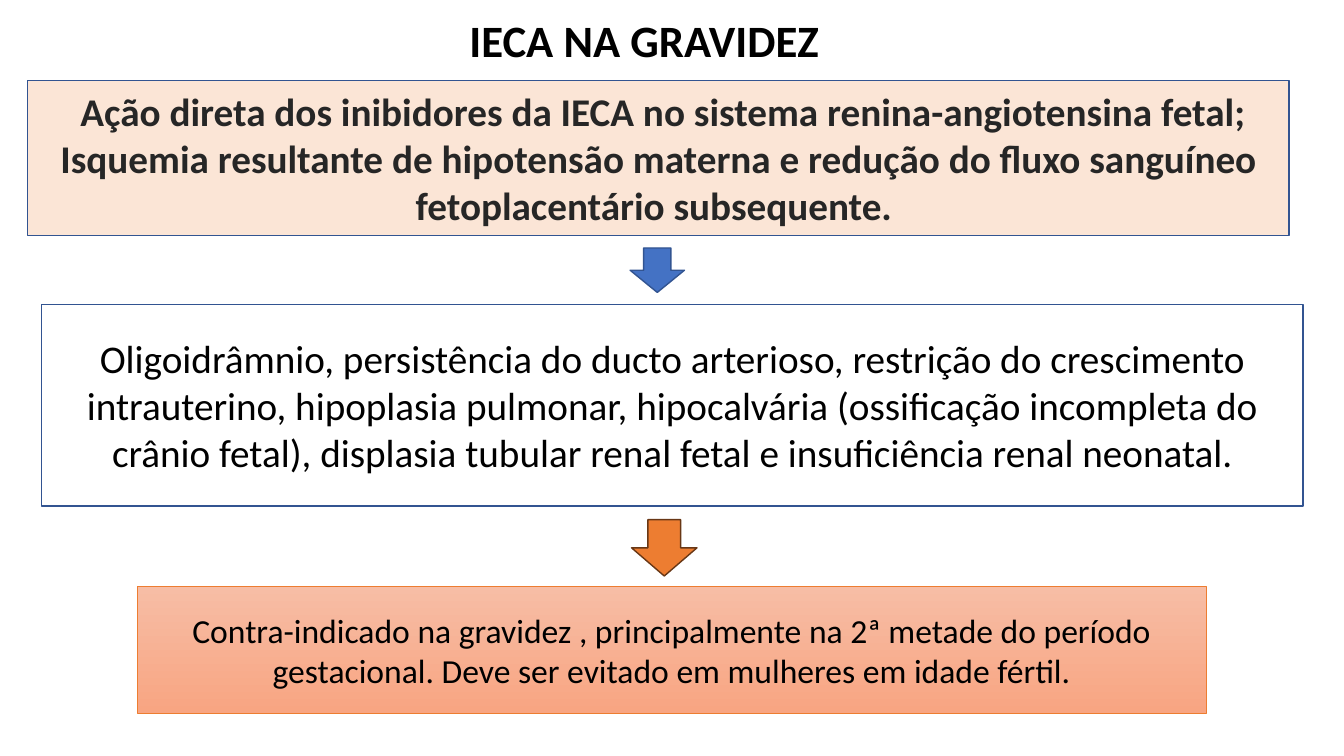
from dataclasses import dataclass
from typing import Any, Optional

import pptx
import pptx.dml.color
import pptx.enum.shapes
import pptx.enum.text
import pptx.util

Cm = pptx.util.Cm
Pt = pptx.util.Pt
RGBColor = pptx.dml.color.RGBColor
Shape = pptx.enum.shapes.MSO_SHAPE

BLACK = RGBColor(0x00, 0x00, 0x00)
CHARCOAL = RGBColor(0x26, 0x26, 0x26)
BLUE = RGBColor(0x44, 0x72, 0xC4)
DARK_BLUE = RGBColor(0x32, 0x54, 0x91)
ORANGE = RGBColor(0xED, 0x7D, 0x31)
BROWN = RGBColor(0x68, 0x37, 0x15)
PEACH = RGBColor(0xFB, 0xE5, 0xD6)
LIGHT_SALMON = RGBColor(0xF7, 0xBD, 0xA5)
SALMON = RGBColor(0xF8, 0xA5, 0x82)


@dataclass(frozen=True)
class Block:
    left: float
    top: float
    width: float
    height: float
    line: RGBColor
    fills: tuple[RGBColor, ...] = ()
    kind: Any = Shape.RECTANGLE
    line_width: float = 1
    rotation: float = 0
    paragraphs: tuple[str, ...] = ()
    size: float = 28
    color: RGBColor = BLACK
    bold: bool = False


BLOCKS = (
    Block(1.04, 7.67, 31.8, 5.08, DARK_BLUE, paragraphs=(
        "Oligoidrâmnio, persistência do ducto arterioso, restrição do crescimento "
        "intrauterino, hipoplasia pulmonar, hipocalvária (ossificação incompleta do "
        "crânio fetal), displasia tubular renal fetal e insuficiência renal neonatal.",
    )),
    Block(15.88, 6.25, 1.37, 1.12, DARK_BLUE, (BLUE,), Shape.DOWN_ARROW),
    Block(0.69, 2.03, 31.8, 3.91, DARK_BLUE, (PEACH,), color=CHARCOAL, bold=True, paragraphs=(
        " Ação direta dos inibidores da IECA no sistema renina-angiotensina fetal;",
        "Isquemia resultante de hipotensão materna e redução do fluxo sanguíneo "
        "fetoplacentário subsequente. ",
    )),
    Block(16.03, 12.98, 1.42, 1.65, BROWN, (ORANGE,), Shape.RIGHT_ARROW, rotation=90),
    Block(3.45, 14.78, 26.95, 3.2, ORANGE, (LIGHT_SALMON, SALMON), line_width=0.5, size=24,
          paragraphs=(
              "Contra-indicado na gravidez , principalmente na 2ª metade do período "
              "gestacional. Deve ser evitado em mulheres em idade fértil.",
          )),
)


def write_text(shape: Any, paragraphs: tuple[str, ...], *, size: float,
               color: RGBColor = BLACK, bold: bool = False,
               line_spacing: Optional[float] = None) -> None:
    frame = shape.text_frame
    frame.word_wrap = True
    frame.vertical_anchor = pptx.enum.text.MSO_ANCHOR.MIDDLE
    frame.text = "\n".join(paragraphs)
    for paragraph in frame.paragraphs:
        paragraph.alignment = pptx.enum.text.PP_ALIGN.CENTER
        paragraph.line_spacing = line_spacing
        for run in paragraph.runs:
            run.font.name = "Calibri"
            run.font.size = Pt(size)
            run.font.bold = bold
            run.font.color.rgb = color


def paint(fill: Any, colors: tuple[RGBColor, ...]) -> None:
    if not colors:
        fill.background()
    elif len(colors) == 1:
        fill.solid()
        fill.fore_color.rgb = colors[0]
    else:
        fill.gradient()
        fill.gradient_angle = 270
        for stop, color in zip(fill.gradient_stops, colors):
            stop.color.rgb = color


def draw_block(slide: Any, block: Block) -> None:
    shape = slide.shapes.add_shape(block.kind, Cm(block.left), Cm(block.top),
                                   Cm(block.width), Cm(block.height))
    shape.shadow.inherit = False
    shape.rotation = block.rotation
    paint(shape.fill, block.fills)
    shape.line.color.rgb = block.line
    shape.line.width = Pt(block.line_width)
    if block.paragraphs:
        write_text(shape, block.paragraphs, size=block.size, color=block.color, bold=block.bold)


def main() -> None:
    presentation = pptx.Presentation()
    presentation.slide_width = Cm(33.87)
    presentation.slide_height = Cm(19.05)
    slide = presentation.slides.add_slide(presentation.slide_layouts.get_by_name("Title Only"))
    title = slide.shapes.title
    title.left, title.top = Cm(8.41), Cm(0.18)
    title.width, title.height = Cm(15.65), Cm(1.8)
    write_text(title, ("IECA NA GRAVIDEZ",), size=32, bold=True, line_spacing=0.9)
    for block in BLOCKS:
        draw_block(slide, block)
    presentation.save("out.pptx")


if __name__ == "__main__":
    main()
